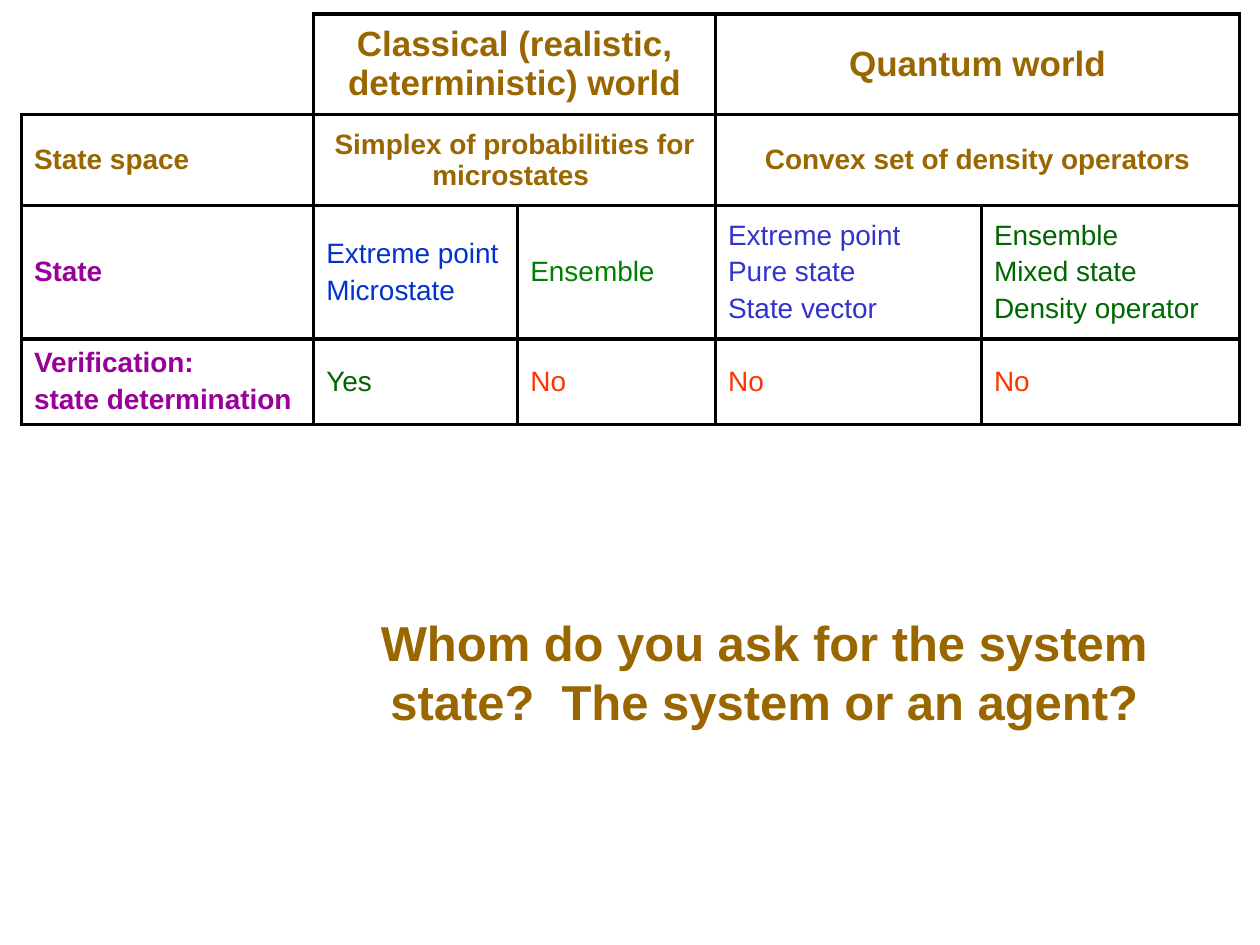
from dataclasses import dataclass

from lxml import etree
from pptx import Presentation
from pptx.dml.color import RGBColor
from pptx.enum.text import MSO_ANCHOR, MSO_AUTO_SIZE, PP_ALIGN
from pptx.oxml.ns import qn
from pptx.util import Inches, Pt

LEFT, CENTER = PP_ALIGN.LEFT, PP_ALIGN.CENTER
MIDDLE = MSO_ANCHOR.MIDDLE
FIT_SHAPE = MSO_AUTO_SIZE.SHAPE_TO_FIT_TEXT


@dataclass(frozen=True)
class Theme:
    font: str = "Arial"
    heading_size: int = 20
    body_size: int = 16
    question_size: int = 28
    brown: str = "996600"
    purple: str = "990099"
    blue: str = "0033CC"
    indigo: str = "3333CC"
    green: str = "008000"
    dark_green: str = "006600"
    red: str = "FF3300"
    border: str = "000000"
    border_width: float = 2.25
    space_before: int = 20  # percent of a line


@dataclass(frozen=True)
class Entry:
    lines: tuple
    color: str
    size: int
    bold: bool = False
    align: int = LEFT
    span: int = 1


class SlideBuilder:
    def __init__(self, slide, theme):
        self.slide = slide
        self.theme = theme

    def style(self, paragraph, color, size, bold, align):
        paragraph.alignment = align
        font = paragraph.font
        font.name, font.size, font.bold = self.theme.font, Pt(size), bold
        font.color.rgb = RGBColor.from_string(color)

    def space_before(self, paragraph):
        properties = paragraph._p.get_or_add_pPr()
        spacing = etree.SubElement(properties, qn("a:spcBef"))
        etree.SubElement(spacing, qn("a:spcPct"), val=str(self.theme.space_before * 1000))

    def borders(self, cell, hidden=()):
        properties = cell._tc.get_or_add_tcPr()
        for side in "LRTB":
            line = etree.SubElement(properties, qn(f"a:ln{side}"),
                                    w=str(Pt(self.theme.border_width)))
            if side in hidden:
                etree.SubElement(line, qn("a:noFill"))
            else:
                fill = etree.SubElement(line, qn("a:solidFill"))
                etree.SubElement(fill, qn("a:srgbClr"), val=self.theme.border)

    def fill_cell(self, cell, entry):
        cell.vertical_anchor = MIDDLE
        cell.text = "\n".join(entry.lines)
        for paragraph in cell.text_frame.paragraphs:
            self.space_before(paragraph)
            self.style(paragraph, entry.color, entry.size, entry.bold, entry.align)

    def table(self, left, top, widths, heights, rows):
        table = self.slide.shapes.add_table(
            len(heights), len(widths), Inches(left), Inches(top),
            Inches(sum(widths)), Inches(sum(heights))).table
        table.first_row = table.horz_banding = False
        for column, width in zip(table.columns, widths):
            column.width = Inches(width)
        for row, height in zip(table.rows, heights):
            row.height = Inches(height)

        # The corner cell stays open on its outer sides
        for r in range(len(heights)):
            for c in range(len(widths)):
                cell = table.cell(r, c)
                self.borders(cell, "LT" if r == c == 0 else "")
                cell.fill.background()

        for r, entries in enumerate(rows):
            c = 0
            for entry in entries:
                if entry is None:
                    c += 1
                    continue
                cell = table.cell(r, c)
                if entry.span > 1:
                    cell.merge(table.cell(r, c + entry.span - 1))
                self.fill_cell(cell, entry)
                c += entry.span

    def text(self, left, top, width, height, words, color, size):
        box = self.slide.shapes.add_textbox(
            Inches(left), Inches(top), Inches(width), Inches(height))
        frame = box.text_frame
        frame.word_wrap = True
        frame.auto_size = FIT_SHAPE
        frame.text = words
        self.style(frame.paragraphs[0], color, size, True, CENTER)


def main():
    theme = Theme()
    presentation = Presentation()
    presentation.slide_width, presentation.slide_height = Inches(10), Inches(7.5)
    slide = presentation.slides.add_slide(presentation.slide_layouts[6])
    builder = SlideBuilder(slide, theme)

    def world(words, size):
        return Entry((words,), theme.brown, size, True, CENTER, 2)

    def label(color, *lines):
        return Entry(lines, color, theme.body_size, True)

    def item(color, *lines):
        return Entry(lines, color, theme.body_size)

    # Question
    builder.text(2.63, 4.81, 6.87, 1.04,
                 "Whom do you ask for the system state?  The system or an agent?",
                 theme.brown, theme.question_size)

    # Comparison of the two worlds
    no = item(theme.red, "No")
    comparison = [
        [None,
         world("Classical (realistic, deterministic) world", theme.heading_size),
         world("Quantum world", theme.heading_size)],
        [label(theme.brown, "State space"),
         world("Simplex of probabilities for microstates ", theme.body_size),
         world("Convex set of density operators", theme.body_size)],
        [label(theme.purple, "State"),
         item(theme.blue, "Extreme point", "Microstate"),
         item(theme.green, "Ensemble"),
         item(theme.indigo, "Extreme point", "Pure state", "State vector"),
         item(theme.dark_green, "Ensemble", "Mixed state", "Density operator")],
        [label(theme.purple, "Verification:", "state determination"),
         item(theme.dark_green, "Yes"), no, no, no],
    ]
    builder.table(0.17, 0.11, [2.32, 1.62, 1.57, 2.11, 2.05],
                  [0.8, 0.72, 1.06, 0.66], comparison)

    presentation.save("out.pptx")


if __name__ == "__main__":
    main()
